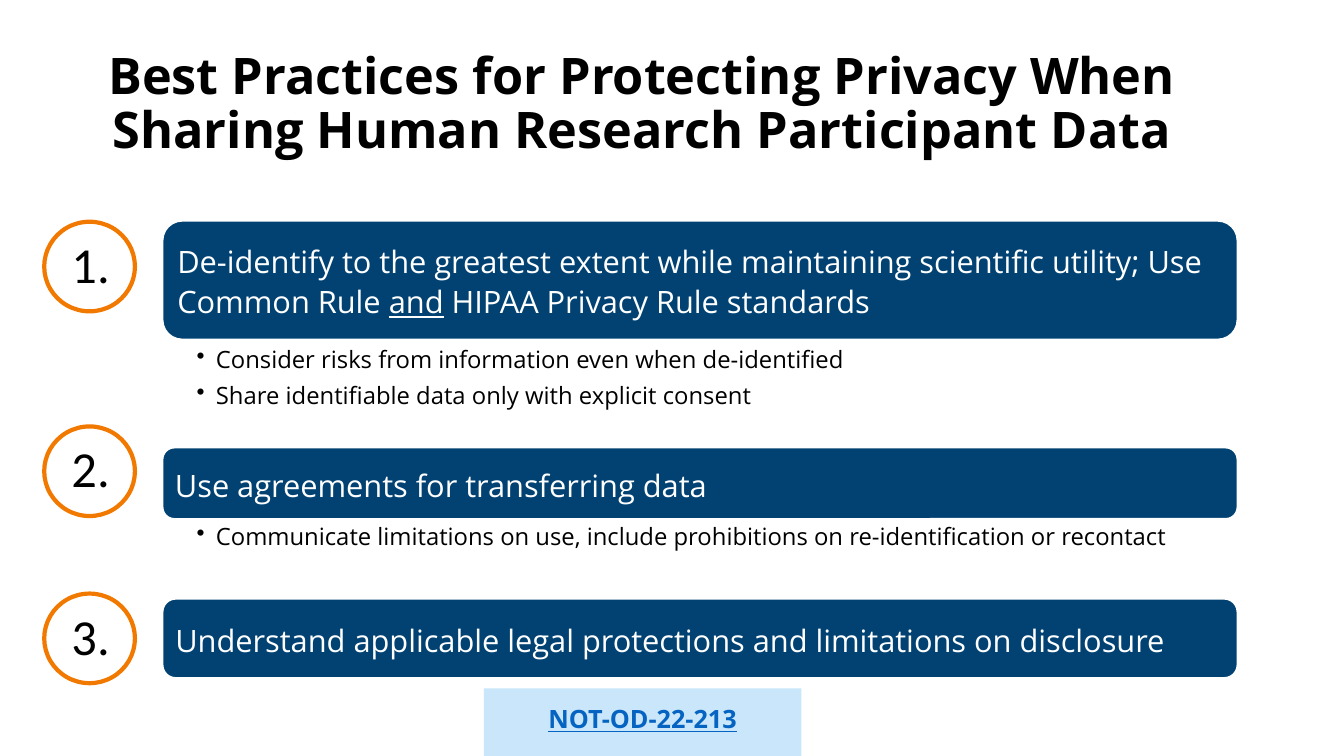
from dataclasses import dataclass

from lxml import etree
from pptx import Presentation
from pptx.dml.color import RGBColor
from pptx.enum.shapes import MSO_SHAPE
from pptx.enum.text import MSO_ANCHOR, PP_ALIGN
from pptx.oxml.ns import qn
from pptx.util import Inches, Pt

ROUND, OVAL, RECT = MSO_SHAPE.ROUNDED_RECTANGLE, MSO_SHAPE.OVAL, MSO_SHAPE.RECTANGLE
TOP, MID = MSO_ANCHOR.TOP, MSO_ANCHOR.MIDDLE
LEFT, MIDDLE = PP_ALIGN.LEFT, PP_ALIGN.CENTER
COLS, ROWS = 48, 27


@dataclass(frozen=True)
class Theme:
    face: str = "Open Sans"
    digit: str = "Calibri"
    ink: str = "000000"
    paper: str = "FFFFFF"
    navy: str = "014273"
    orange: str = "F27900"
    sky: str = "C9E6FB"
    link: str = "0563C1"
    head: int = 36
    lead: int = 22
    point: int = 17
    note: int = 18


class Page:
    def __init__(self, deck, theme):
        self.theme = theme
        self.slide = deck.slides.add_slide(deck.slide_layouts[6])
        self.col = deck.slide_width / COLS
        self.row = deck.slide_height / ROWS

    def place(self, box):
        """Turn columns and rows into slide lengths."""
        x, y, w, h = box
        return [int(n) for n in (x * self.col, y * self.row, w * self.col, h * self.row)]

    def text(self, box):
        return self.slide.shapes.add_textbox(*self.place(box)).text_frame

    def shape(self, kind, box, fill=None, line=None, width=0):
        item = self.slide.shapes.add_shape(kind, *self.place(box))
        item.shadow.inherit = False
        if fill:
            item.fill.solid()
            item.fill.fore_color.rgb = RGBColor.from_string(fill)
        else:
            item.fill.background()
        if line:
            item.line.color.rgb = RGBColor.from_string(line)
            item.line.width = Pt(width)
        else:
            item.line.fill.background()
        return item.text_frame

    def frame(self, frame, anchor=TOP, pad=(0.1, 0.05, 0.1, 0.05)):
        frame.word_wrap = True
        frame.vertical_anchor = anchor
        (frame.margin_left, frame.margin_top,
         frame.margin_right, frame.margin_bottom) = map(Inches, pad)

    def style(self, para, size, color, face=None, bold=False, align=LEFT, space=1.0):
        para.alignment = align
        para.line_spacing = space
        font = para.font
        font.name = face or self.theme.face
        font.size, font.bold = Pt(size), bold
        font.color.rgb = RGBColor.from_string(color)

    def title(self, box, words):
        frame = self.text(box)
        self.frame(frame, MID)
        para = frame.paragraphs[0]
        para.text = words
        self.style(para, self.theme.head, self.theme.ink, bold=True,
                   align=MIDDLE, space=0.9)

    def badge(self, top, label):
        t = self.theme
        frame = self.text((2.2, top + 0.22, 2.56, 2.56))
        self.frame(frame)
        para = frame.paragraphs[0]
        para.text = label
        self.style(para, t.head, t.ink, t.digit)
        self.shape(OVAL, (1.58, top, 3.24, 3.2), line=t.orange, width=3)

    def card(self, box, parts):
        """Draw a filled card; every second part is underlined."""
        t = self.theme
        frame = self.shape(ROUND, box, t.navy, t.paper, 1.5)
        self.frame(frame, MID, (0.09,) * 4)
        para = frame.paragraphs[0]
        for i, part in enumerate(parts):
            run = para.add_run()
            run.text = part
            if i % 2:
                run.font.underline = True
        self.style(para, t.lead, t.paper, space=1.08)

    def points(self, box, lines):
        t = self.theme
        frame = self.text(box)
        self.frame(frame, TOP, (0.34, 0.03, 0.17, 0.03))
        for i, line in enumerate(lines):
            para = frame.add_paragraph() if i else frame.paragraphs[0]
            para.text = line
            props = para._p.get_or_add_pPr()
            props.set("marL", str(Inches(0.19)))
            props.set("indent", str(-Inches(0.19)))
            para.space_after = Pt(t.point * 0.2)
            etree.SubElement(props, qn("a:buChar"), char="•")
            self.style(para, t.point, t.ink, space=1.08)

    def note(self, box, words):
        t = self.theme
        frame = self.shape(RECT, box, t.sky)
        self.frame(frame, TOP, (0.1, 0.15, 0.1, 0.1))
        para = frame.paragraphs[0]
        para.text = words
        self.style(para, t.note, t.link, bold=True, align=MIDDLE)
        para.font.underline = True


# badge top, card top, card height, card text, list top, list height, list lines
STEPS = [
    (7.92, 7.88, 4.25,
     ["De-identify to the greatest extent while maintaining scientific utility; "
      "Use Common Rule ", "and", " HIPAA Privacy Rule standards"],
     12.13, 3.85,
     ["Consider risks from information even when de-identified",
      "Share identifiable data only with explicit consent"]),
    (15.23, 15.98, 2.56, ["Use agreements for transferring data"],
     18.43, 2.84,
     ["Communicate limitations on use, include prohibitions on "
      "re-identification or recontact"]),
    (21.2, 21.38, 2.84,
     ["Understand applicable legal protections and limitations on disclosure"],
     0, 0, []),
]


def main():
    deck = Presentation()
    deck.slide_width, deck.slide_height = Inches(13.33), Inches(7.5)
    page = Page(deck, Theme())
    page.title((1.15, 1.15, 43.56, 5.22),
               "Best Practices for Protecting Privacy When "
               "Sharing Human Research Participant Data")
    left, wide = 5.8, 38.4
    for i, (ring, top, tall, parts, below, room, lines) in enumerate(STEPS, 1):
        page.card((left, top, wide, tall), parts)
        if lines:
            page.points((left, below, wide, room), lines)
        page.badge(ring, f"{i}.")
    page.note((17.28, 24.59, 11.34, 2.41), "NOT-OD-22-213")
    deck.save("out.pptx")


if __name__ == "__main__":
    main()
